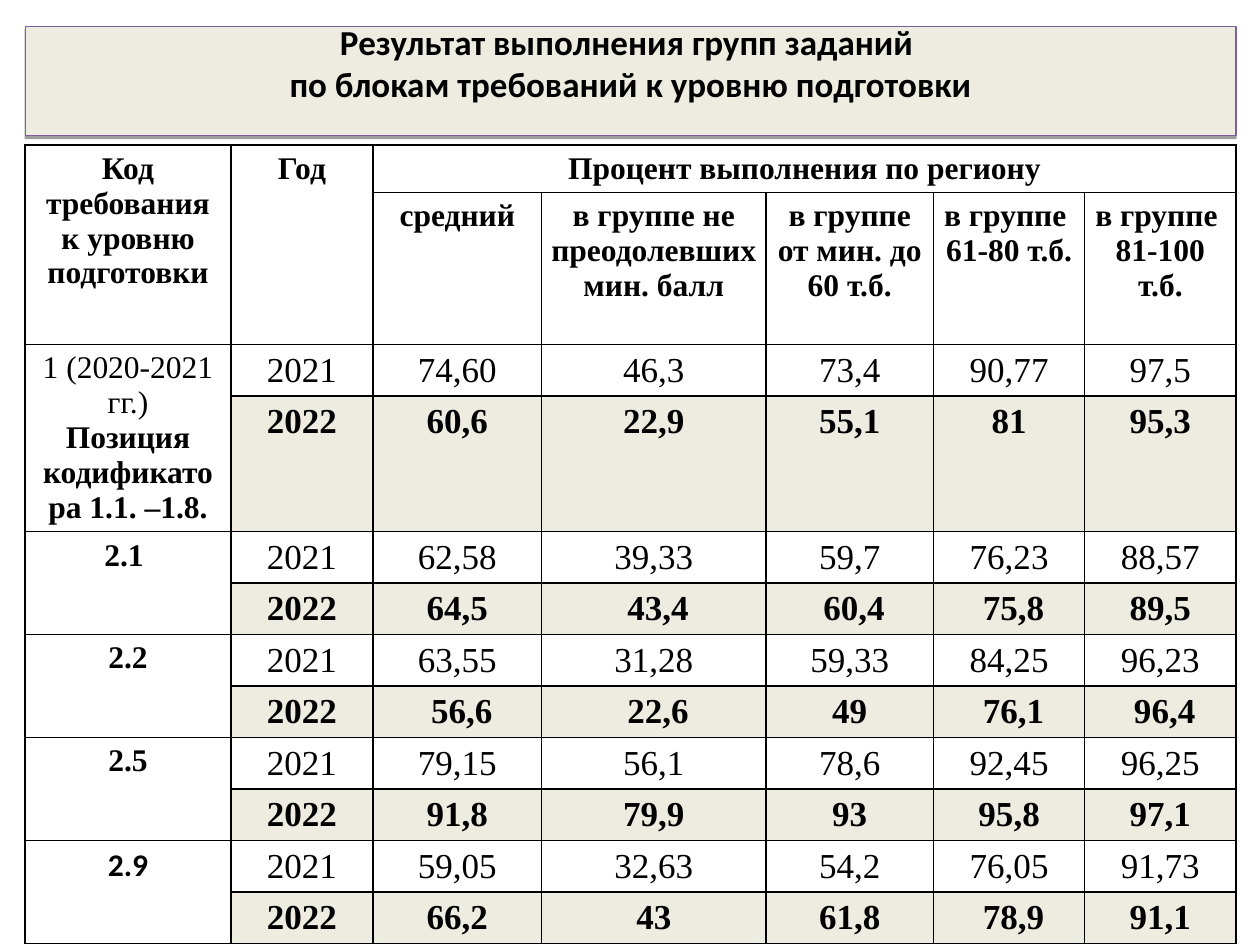
import pptx
import pptx.util
import pptx.dml.color
import pptx.enum.shapes
import pptx.enum.text
import pptx.oxml.ns
import lxml.etree

Pt = pptx.util.Pt
ANCHOR = pptx.enum.text.MSO_ANCHOR
HEADER_FONT, TABLE_FONT = "Calibri", "Times New Roman"
BLACK, WHITE, BEIGE, PURPLE = "000000", "FFFFFF", "EEECE1", "7D5FA0"

LEFT, WIDTH = 14.4, 691.9
COLUMNS = [117.5, 81.3, 96.3, 128.2, 95.8, 86.4, 86.4]
YEAR_ROW = 29.4
ROWS = [26.9, 86.9, YEAR_ROW, 77.4] + [YEAR_ROW] * 8
GROUPS = [
    "средний",
    "в группе не преодолевших мин. балл",
    "в группе от мин. до 60 т.б.",
    "в группе \n61-80 т.б.",
    "в группе \n81-100 т.б.",
]
RESULTS = [
    ("1 (2020-2021 гг.)\nПозиция кодификатора 1.1. –1.8.",
     ["74,60", "46,3", "73,4", "90,77", "97,5"],
     ["60,6", "22,9", "55,1", "81", "95,3"]),
    ("2.1 ",
     ["62,58", "39,33", "59,7", "76,23", "88,57"],
     ["64,5", " 43,4", " 60,4", " 75,8", "89,5"]),
    ("2.2",
     ["63,55", "31,28", "59,33", "84,25", "96,23"],
     [" 56,6", " 22,6", "49", " 76,1", " 96,4"]),
    ("2.5",
     ["79,15", "56,1", "78,6", "92,45", "96,25"],
     ["91,8", "79,9", "93", "95,8", "97,1"]),
    ("2.9",
     ["59,05", "32,63", "54,2", "76,05", "91,73"],
     ["66,2", "43", "61,8", " 78,9", "91,1"]),
]


def rgb(value):
    return pptx.dml.color.RGBColor.from_string(value)


def write(tf, text, font=TABLE_FONT, size=18, bold=True, color=BLACK):
    tf.text = text
    for p in tf.paragraphs:
        p.alignment = pptx.enum.text.PP_ALIGN.CENTER
        for r in p.runs:
            r.font.name = font
            r.font.size = Pt(size)
            r.font.bold = bold
            r.font.color.rgb = rgb(color)


def add_xml(parent, tag, **attributes):
    element = lxml.etree.SubElement(parent, pptx.oxml.ns.qn(tag))
    for name, value in attributes.items():
        element.set(name, str(value))
    return element


class SlideBuilder:
    def __init__(self, slide, border=0.96):
        self.s = slide
        self.border = border

    def banner(self, text, left, top, width, height):
        sp = self.s.shapes.add_shape(
            pptx.enum.shapes.MSO_SHAPE.RECTANGLE,
            Pt(left), Pt(top), Pt(width), Pt(height))
        sp.fill.solid()
        sp.fill.fore_color.rgb = rgb(BEIGE)
        sp.line.color.rgb = rgb(PURPLE)
        sp.line.width = Pt(0.75)
        sp.shadow.inherit = False
        effects = sp._element.spPr.find(pptx.oxml.ns.qn("a:effectLst"))
        shadow = add_xml(effects, "a:outerShdw", blurRad=0, dist=Pt(1.6),
                         dir=5400000, rotWithShape=0)
        add_xml(add_xml(shadow, "a:srgbClr", val=BLACK), "a:alpha", val=38000)
        tf = sp.text_frame
        tf.word_wrap = True
        tf.vertical_anchor = ANCHOR.MIDDLE
        tf.margin_top, tf.margin_bottom = Pt(0), Pt(20.6)
        write(tf, text, font=HEADER_FONT, size=20)

    def table(self, left, top, columns, rows):
        table = self.s.shapes.add_table(
            len(rows), len(columns), Pt(left), Pt(top),
            Pt(sum(columns)), Pt(sum(rows))).table
        table.first_row = table.horz_banding = False
        for column, width in zip(table.columns, columns):
            column.width = Pt(width)
        for row, height in zip(table.rows, rows):
            row.height = Pt(height)
        for cell in table.iter_cells():
            self.frame(cell)
        return table

    def frame(self, cell):
        cell.margin_left = cell.margin_right = Pt(5.2)
        cell.margin_top = cell.margin_bottom = Pt(3.6)
        tcPr = cell._tc.get_or_add_tcPr()
        for side in ("L", "R", "T", "B"):
            line = add_xml(tcPr, "a:ln" + side, w=Pt(self.border))
            add_xml(add_xml(line, "a:solidFill"), "a:srgbClr", val=BLACK)
        cell.fill.background()

    def cell(self, table, row, column, text, span=(1, 1), fill=None, **style):
        cell = table.cell(row, column)
        if span != (1, 1):
            cell.merge(table.cell(row + span[0] - 1, column + span[1] - 1))
        if fill:
            cell.fill.solid()
            cell.fill.fore_color.rgb = rgb(fill)
        write(cell.text_frame, text, **style)
        return cell


def main():
    prs = pptx.Presentation()
    prs.slide_width, prs.slide_height = Pt(720), Pt(540)
    builder = SlideBuilder(prs.slides.add_slide(prs.slide_layouts[6]))

    builder.banner("Результат выполнения групп заданий \v"
                   "по блокам требований к уровню подготовки",
                   LEFT, 15, WIDTH, 62.6)

    table = builder.table(LEFT, 82.8, COLUMNS, ROWS)
    builder.cell(table, 0, 0, "Код требования к уровню подготовки", span=(2, 1))
    builder.cell(table, 0, 1, "Год", span=(2, 1))
    builder.cell(table, 0, 2, "Процент выполнения по региону", span=(1, 5))
    for column, group in enumerate(GROUPS, 2):
        builder.cell(table, 1, column, group)

    for i, (code, previous, current) in enumerate(RESULTS):
        row = 2 + 2 * i
        font = HEADER_FONT if code == "2.9" else TABLE_FONT
        code_cell = builder.cell(table, row, 0, code, span=(2, 1), font=font)
        if i == 0:
            code_cell.text_frame.paragraphs[0].runs[0].font.bold = False
        for column, value in enumerate(["2021"] + previous, 1):
            builder.cell(table, row, column, value, fill=WHITE, size=20, bold=False)
        for column, value in enumerate(["2022"] + current, 1):
            builder.cell(table, row + 1, column, value, fill=BEIGE, size=20)

    prs.save("out.pptx")


if __name__ == "__main__":
    main()
